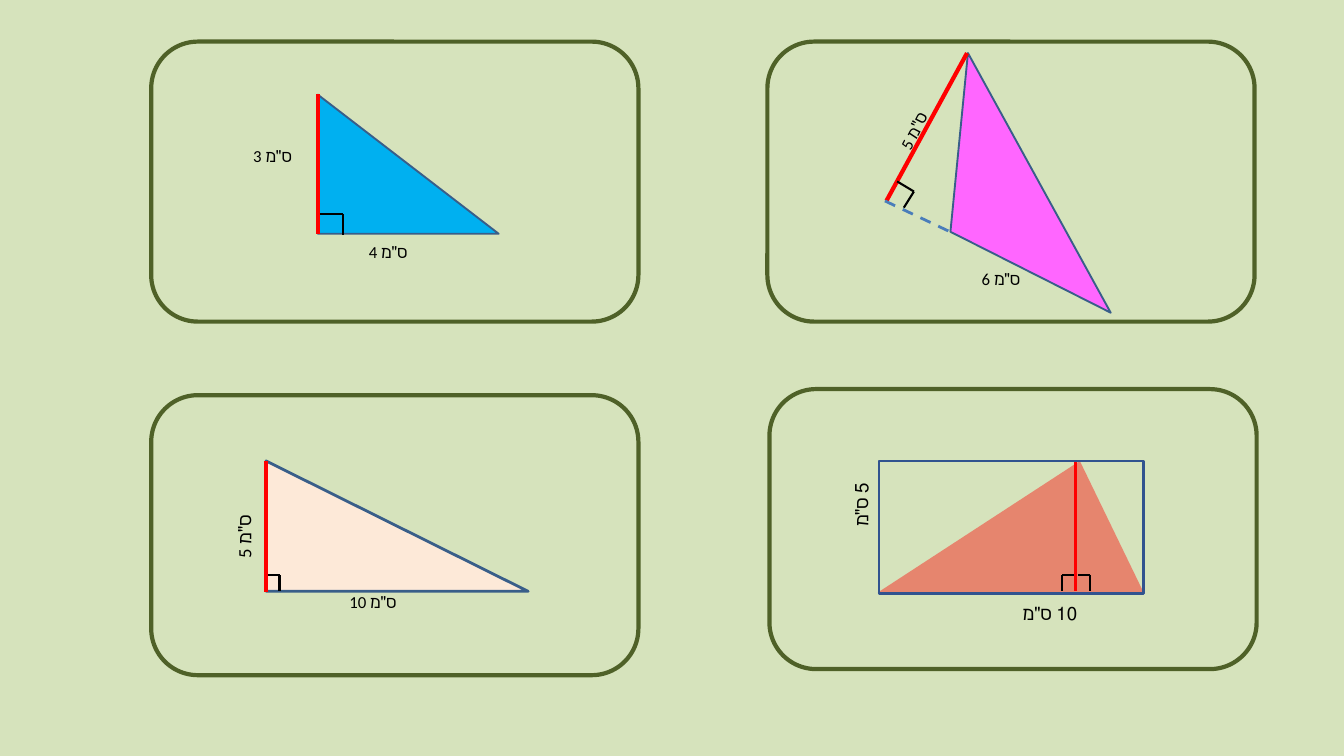
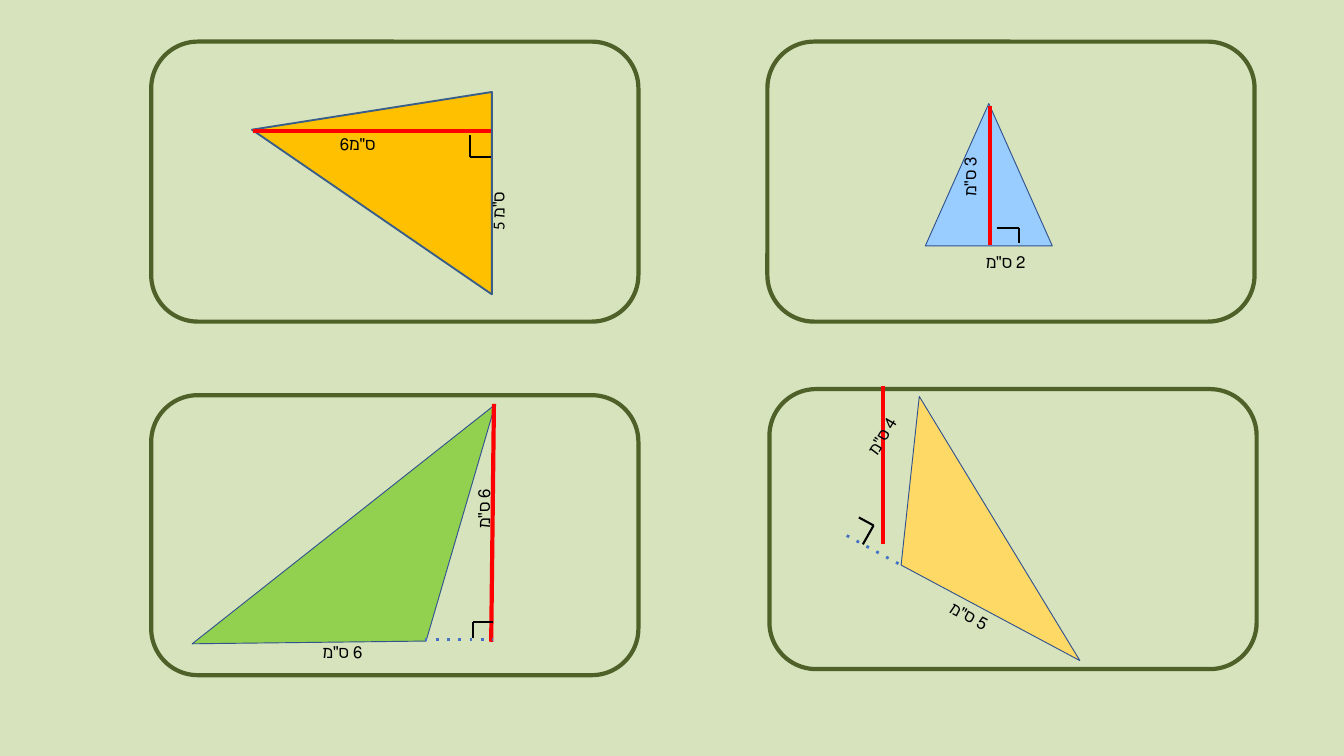
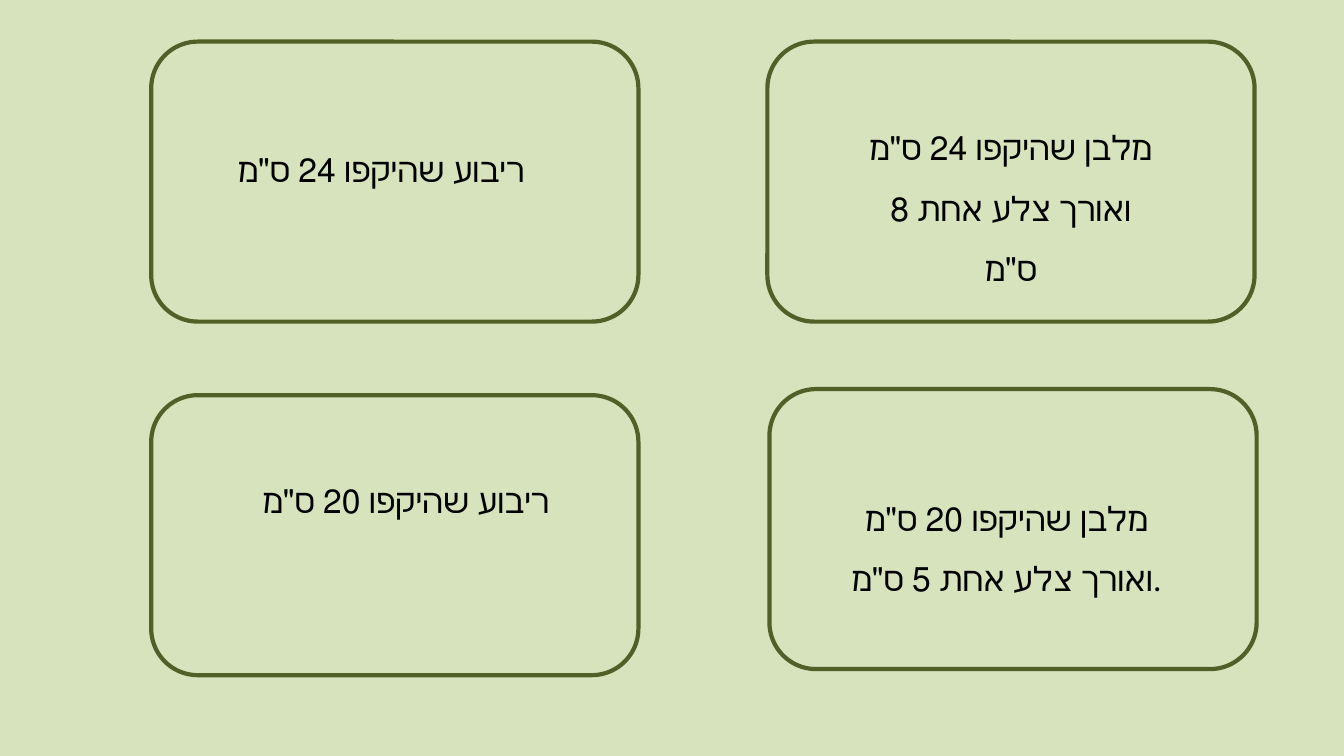
from collections import namedtuple

from lxml import etree
from pptx import Presentation
from pptx.dml.color import RGBColor
from pptx.enum import shapes, text
from pptx.oxml import ns
from pptx.util import Pt

COLORS = {
    "background": "D6E3BC", "frame": "4F6128", "ink": "000000", "height": "FF0000",
    "outline": "395E89", "dark_outline": "31538F", "dash": "4A7DBA", "dot": "4472C4",
    "magenta": "FF66FF", "cyan": "00B0F0", "peach": "FDE9D8", "amber": "FFC000",
    "green": "92D050", "sky": "99CCFF", "sand": "FFD966",
}
FONT = "Calibri"
SHAPE = shapes.MSO_SHAPE

FRAME_SIZE = (522, 300)
FRAME_CORNERS = [(822.2, 44.6), (824.4, 416.9), (162, 44.6), (162, 423.4)]

# Preset takes a box (left, top, width, height), Polygon a list of points
Preset = namedtuple("Preset", "kind box fill line width rotation apex opacity",
                    defaults=(None, None, 1, 0, None, None))
Polygon = namedtuple("Polygon", "points fill line width")
Height = namedtuple("Height", "start end width", defaults=(4.5,))
Extension = namedtuple("Extension", "start end dash")
RightAngle = namedtuple("RightAngle", "points")
Label = namedtuple("Label", "text box rotation size rtl", defaults=(0, 18, False))

FIGURE_SLIDES = [
    [
        [
            Preset(SHAPE.ISOSCELES_TRIANGLE, (907.2, 167.8, 317.5, 108.7),
                   "magenta", "outline", 2, 241.2),
            Height((1036.1, 56.9), (949.7, 215.3)),
            Extension((948.2, 215.3), (1018.1, 248.4), "dash"),
            Label('5 ס"מ', (949, 122.4, 63.4, 28.8), 297.1),
            Label('6 ס"מ', (1044.7, 284.4, 63.4, 28.8)),
            RightAngle([(961.2, 194.4), (979.2, 205.2), (968.4, 222.5)]),
        ],
        [
            Preset(SHAPE.RIGHT_TRIANGLE, (340.6, 101.5, 193.7, 149), "cyan", "outline", 2),
            Height((340.6, 100.8), (340.6, 250.6)),
            Label('3 ס"מ', (264.2, 152.6, 71.3, 32.4)),
            Label('4 ס"מ', (388.1, 254.9, 71.3, 32.4)),
            RightAngle([(342.7, 229.7), (367.2, 229.7), (367.2, 252)]),
        ],
        [
            Preset(SHAPE.RIGHT_TRIANGLE, (285.1, 493.9, 280.8, 139.7), "peach", "outline", 3),
            Label('10 ס"מ', (367.2, 630, 83.5, 28.8)),
            Height((285.1, 493.9), (285.1, 634.3)),
            RightAngle([(287.3, 616.3), (299.5, 616.3), (299.5, 633.6)]),
            Label('5 ס"מ', (220.3, 547.9, 82.8, 31.7), 270, 20),
        ],
        [
            Preset(SHAPE.ISOSCELES_TRIANGLE, (940.3, 493.9, 285.1, 141.1),
                   "height", apex=0.76, opacity=41),
            Label('10 ס"מ', (987.8, 641.5, 173.5, 31.7), 0, 20, True),
            Label('5 ס"מ', (881.3, 535.7, 82.8, 31.7), 270, 20, True),
            Height((1152.7, 493.9), (1152.7, 633.6), 3),
            RightAngle([(1154.9, 615.6), (1167.8, 615.6), (1167.8, 633.6)]),
            RightAngle([(1150.6, 615.6), (1138.3, 615.6), (1138.3, 633.6)]),
            Preset(SHAPE.RECTANGLE, (941.8, 493.9, 283.7, 141.8), None, "dark_outline", 3),
        ],
    ],
    [
        [
            Polygon([(527, 315.4), (270, 139), (527, 98.6)], "amber", "outline", 2),
            Height((270.7, 140.4), (526.3, 140.4)),
            Label('5 ס"מ', (496.8, 200.2, 76.3, 31.7), 270),
            Label('ס"מ6', (357, 139.7, 123.8, 28.8)),
            RightAngle([(526.3, 168.5), (503.3, 168.5), (503.3, 144.7)]),
        ],
        [
            Polygon([(530.6, 433.4), (456.5, 686.9), (205.9, 689.8)],
                    "green", "dark_outline", 1),
            Height((529.2, 432.7), (526.3, 687.6)),
            Extension((455, 685.4), (528.5, 685.4), "dot"),
            Label('6 ס"מ', (331.9, 684, 63.4, 28.8), rtl=True),
            Label('6 ס"מ', (486.7, 533.5, 62.6, 28.8), 270, rtl=True),
            RightAngle([(506.9, 684), (506.9, 666), (527.8, 666)]),
        ],
        [
            Preset(SHAPE.ISOSCELES_TRIANGLE, (991.4, 110.9, 136.1, 152.6),
                   "sky", "dark_outline"),
            Height((1060.6, 113.8), (1060.6, 262.8)),
            Label('2 ס"מ', (984.2, 266.4, 121.7, 36), rtl=True),
            Label('3 ס"מ', (1011.6, 174.2, 72.7, 46.8), 270, rtl=True),
            RightAngle([(1067.8, 244.1), (1092.2, 244.1), (1092.2, 260.6)]),
        ],
        [
            Polygon([(1157, 707.8), (965.5, 605.5), (985, 424.8)], "sand", "dark_outline", 1),
            Height((946.1, 413.3), (946.1, 583.2)),
            Extension((907.2, 573.8), (965.5, 605.5), "dot"),
            Label('4 ס"מ', (911.5, 455.8, 63.4, 28.8), 300.7, rtl=True),
            Label('5 ס"מ', (1003.7, 643.7, 63.4, 28.8), 28, rtl=True),
            RightAngle([(920.2, 554.4), (936, 563), (924.5, 583.2)]),
        ],
    ],
]

TASKS = [
    (['מלבן שהיקפו 24 ס"מ ואורך צלע אחת 8 ס"מ'], (918, 110.9, 329.8, 130.3)),
    (['ריבוע שהיקפו 24 ס"מ'], (213.2, 133.9, 390.2, 64.8)),
    (['מלבן שהיקפו 20 ס"מ', 'ואורך צלע אחת 5 ס"מ.'], (883.3, 508.3, 390.2, 130.3)),
    (['ריבוע שהיקפו 20 ס"מ'], (239.8, 488.9, 390.2, 64.8)),
]


def rgb(name):
    return RGBColor.from_string(COLORS[name])


def points(values):
    return [Pt(v) for v in values]


def paint(s, fill, line, width):
    s.shadow.inherit = False
    if fill:
        s.fill.solid()
        s.fill.fore_color.rgb = rgb(fill)
    else:
        s.fill.background()
    if line:
        s.line.color.rgb = rgb(line)
        s.line.width = Pt(width)
    else:
        s.line.fill.background()


def add_preset(parent, item):
    s = parent.add_shape(item.kind, *points(item.box))
    paint(s, item.fill, item.line, item.width)
    s.rotation = item.rotation
    if item.apex:
        s.adjustments[0] = item.apex
    if item.opacity:
        color = s._element.spPr.find(ns.qn("a:solidFill"))[0]
        etree.SubElement(color, ns.qn("a:alpha"), val=str(item.opacity * 1000))


def add_polygon(parent, item):
    first, *rest = [points(p) for p in item.points]
    outline = parent.build_freeform(*first, scale=1.0)
    outline.add_line_segments(rest, close=True)
    paint(outline.convert_to_shape(), item.fill, item.line, item.width)


def add_line(parent, start, end, color, width, dash=None):
    c = parent.add_connector(shapes.MSO_CONNECTOR.STRAIGHT, *points(start + end))
    c.line.color.rgb = rgb(color)
    c.line.width = Pt(width)
    spPr = c._element.spPr
    if dash:
        etree.SubElement(spPr.find(ns.qn("a:ln")), ns.qn("a:prstDash"), val=dash)
    etree.SubElement(spPr, ns.qn("a:effectLst"))


def add_right_angle(parent, item):
    for start, end in zip(item.points, item.points[1:]):
        add_line(parent, start, end, "ink", 2.25)


def add_text(parent, lines, box, size, align=None, spacing=None, rtl=False):
    s = parent.add_textbox(*points(box))
    tf = s.text_frame
    tf.word_wrap = True
    tf.auto_size = text.MSO_AUTO_SIZE.SHAPE_TO_FIT_TEXT
    tf.text = "\n".join(lines)
    for p in tf.paragraphs:
        p.alignment = align
        p.line_spacing = spacing
        if rtl:
            p._p.get_or_add_pPr().set("rtl", "1")
        for r in p.runs:
            r.font.name = FONT
            r.font.size = Pt(size)
            r.font.color.rgb = rgb("ink")
    return s


def add_label(parent, item):
    align = text.PP_ALIGN.RIGHT if item.rtl else None
    s = add_text(parent, [item.text], item.box, item.size, align, rtl=item.rtl)
    s.rotation = item.rotation


DRAW = {
    Preset: add_preset,
    Polygon: add_polygon,
    Height: lambda parent, i: add_line(parent, i.start, i.end, "height", i.width),
    Extension: lambda parent, i: add_line(parent, i.start, i.end, i.dash, 3, i.dash),
    RightAngle: add_right_angle,
    Label: add_label,
}


def add_card_slide(prs):
    """Add a slide with the background and the four empty frames."""
    slide = prs.slides.add_slide(prs.slide_layouts[6])
    slide.background.fill.solid()
    slide.background.fill.fore_color.rgb = rgb("background")
    for corner in FRAME_CORNERS:
        add_preset(slide.shapes, Preset(SHAPE.ROUNDED_RECTANGLE, corner + FRAME_SIZE,
                                        None, "frame", 4.5))
    return slide


def main():
    prs = Presentation()
    prs.slide_width, prs.slide_height = Pt(1440), Pt(810)
    for figures in FIGURE_SLIDES:
        slide = add_card_slide(prs)
        for figure in figures:
            group = slide.shapes.add_group_shape()
            for item in figure:
                DRAW[type(item)](group.shapes, item)
    slide = add_card_slide(prs)
    for lines, box in TASKS:
        add_text(slide.shapes, lines, box, 36, text.PP_ALIGN.CENTER, 1.5)
    prs.save("out.pptx")


if __name__ == "__main__":
    main()
